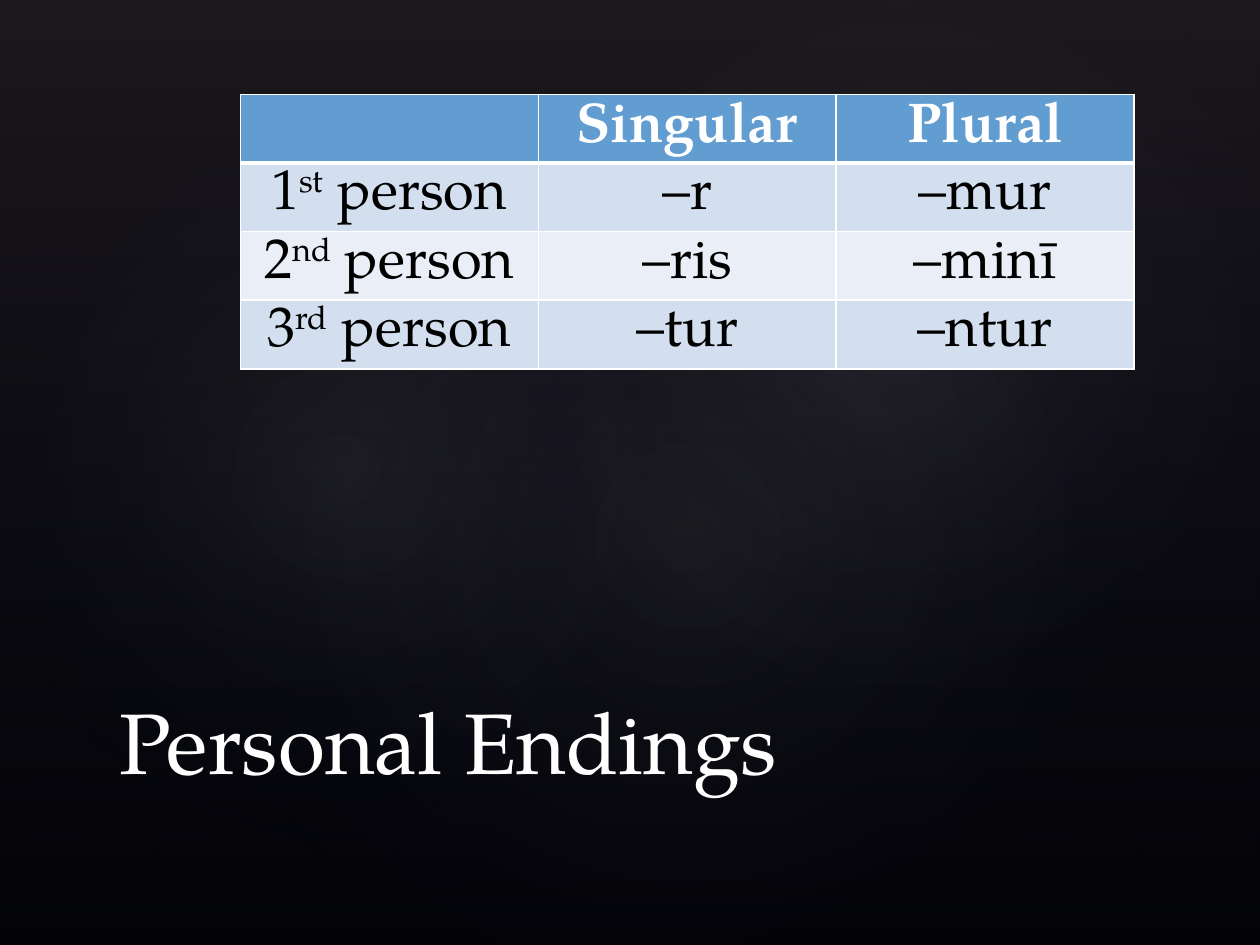
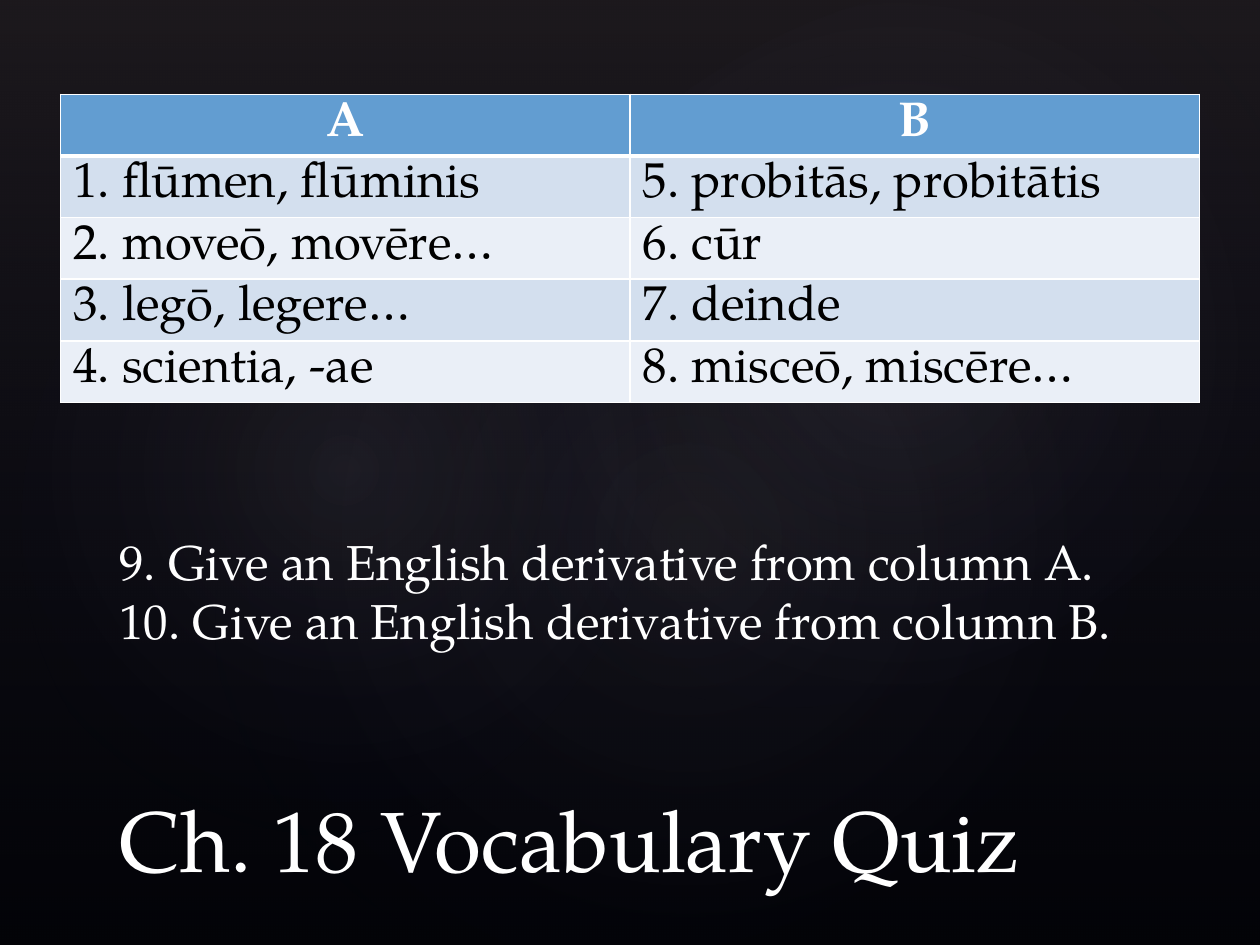
from pptx import Presentation
from pptx import util as u
from pptx.dml.color import RGBColor
from pptx.enum import shapes, text
from pptx.oxml import parse_xml
from pptx.oxml.ns import nsdecls, qn

FONT = "TeX Gyre Pagella"
BLACK = RGBColor(0x00, 0x00, 0x00)
WHITE = RGBColor(0xFF, 0xFF, 0xFF)
BLUE = RGBColor(0x62, 0x9D, 0xD1)
BAND_DARK = RGBColor(0xD3, 0xDF, 0xEE)
BAND_LIGHT = RGBColor(0xEA, 0xEF, 0xF7)
TAUPE = RGBColor(0x50, 0x46, 0x52)
NAVY = RGBColor(0x24, 0x28, 0x52)
MAUVE = RGBColor(0xC4, 0xBC, 0xC6)

LINEAR_DOWN = '<a:lin ang="5400000" scaled="0"/>'
RADIAL = ('<a:path path="circle"><a:fillToRect l="50000" t="50000" '
          'r="50000" b="50000"/></a:path>')
GLOWS = [
    (3.81, 2.9, 20.12, 15.85, 328.7, 7),
    (-0.76, 3.25, 15.39, 12.45, 294.3, 8),
    (9.09, 0.33, 18.01, 13.21, 328.7, 8),
]
ROW_HEIGHT = u.Cm(1.04)
TEXT_LEFT, TEXT_WIDTH = 2.16, 20.96


def gradient_shape(slide, kind, box, stops, direction, rotation=0):
    sp = slide.shapes.add_shape(kind, *map(u.Cm, box))
    sp.shadow.inherit = False
    sp.rotation = rotation
    sp.line.fill.background()
    sp.fill.background()
    marks = "".join(
        f'<a:gs pos="{pos * 1000}"><a:srgbClr val="{color}">'
        f'<a:alpha val="{alpha * 1000}"/></a:srgbClr></a:gs>'
        for pos, color, alpha in stops)
    grad = parse_xml(f'<a:gradFill {nsdecls("a")} rotWithShape="1">'
                     f'<a:gsLst>{marks}</a:gsLst>{direction}</a:gradFill>')
    props = sp._element.spPr
    props.replace(props.find(qn("a:noFill")), grad)


def add_backdrop(slide):
    fill = slide.background.fill
    fill.solid()
    fill.fore_color.rgb = BLACK
    gradient_shape(slide, shapes.MSO_SHAPE.RECTANGLE, (0, 0, 25.4, 19.05),
                   [(0, TAUPE, 36), (100, NAVY, 10)], LINEAR_DOWN)
    for *box, rotation, alpha in GLOWS:
        gradient_shape(slide, shapes.MSO_SHAPE.OVAL, box,
                       [(0, MAUVE, alpha), (58, NAVY, 0)], RADIAL, rotation)


def add_runs(p, content, size, color, bold=False):
    for i, piece in enumerate(content.split("^")):
        r = p.add_run()
        r.text = piece
        r.font.name = FONT
        r.font.size = u.Pt(size)
        r.font.bold = bold
        r.font.color.rgb = color
        if i % 2:
            r._r.get_or_add_rPr().set("baseline", "30000")


def add_text(slide, top, height, lines, size):
    box = slide.shapes.add_textbox(u.Cm(TEXT_LEFT), u.Cm(top),
                                   u.Cm(TEXT_WIDTH), u.Cm(height))
    tf = box.text_frame
    tf.word_wrap = True
    for i, line in enumerate(lines):
        p = tf.add_paragraph() if i else tf.paragraphs[0]
        add_runs(p, line, size, WHITE)
    return tf


def add_title(slide, top, title):
    tf = add_text(slide, top, 2.54, [title], 49)
    tf.vertical_anchor = text.MSO_ANCHOR.BOTTOM


def set_borders(cell, top, bottom):
    props = cell._tc.get_or_add_tcPr()
    for side, width in (("L", 1), ("R", 1), ("T", top), ("B", bottom)):
        props.append(parse_xml(
            f'<a:ln{side} {nsdecls("a")} w="{u.Pt(width)}"><a:solidFill>'
            f'<a:srgbClr val="{WHITE}"/></a:solidFill></a:ln{side}>'))


def add_banded_table(slide, left, width, rows, size, center_body):
    frame = slide.shapes.add_table(len(rows), len(rows[0]), u.Cm(left), u.Cm(1.9),
                                   u.Cm(width), ROW_HEIGHT * len(rows))
    table = frame.table
    for i, row in enumerate(rows):
        table.rows[i].height = ROW_HEIGHT
        header = i == 0
        for j, content in enumerate(row):
            cell = table.cell(i, j)
            set_borders(cell, 3 if i == 1 else 1, 3 if header else 1)
            cell.fill.solid()
            cell.fill.fore_color.rgb = (
                BLUE if header else BAND_DARK if i % 2 else BAND_LIGHT)
            p = cell.text_frame.paragraphs[0]
            p.line_spacing = u.Pt(size)
            if header or center_body:
                p.alignment = text.PP_ALIGN.CENTER
            if content:
                add_runs(p, content, size, WHITE if header else BLACK, header)


def new_slide(prs):
    slide = prs.slides.add_slide(prs.slide_layouts[6])
    add_backdrop(slide)
    return slide


def personal_endings(prs):
    slide = new_slide(prs)
    add_banded_table(slide, 4.85, 18.01, [
        ("", "Singular", "Plural"),
        ("1^st^ person", "–r", "–mur"),
        ("2^nd^ person", "–ris", "–minī"),
        ("3^rd^ person", "–tur", "–ntur"),
    ], 32, True)
    add_title(slide, 13.54, "Personal Endings")


def vocabulary_quiz(prs):
    slide = new_slide(prs)
    add_banded_table(slide, 1.22, 22.96, [
        ("A", "B"),
        ("1. flūmen, flūminis", "5. probitās, probitātis"),
        ("2. moveō, movēre…", "6. cūr"),
        ("3. legō, legere…", "7. deinde"),
        ("4. scientia, -ae", "8. misceō, miscēre…"),
    ], 28, False)
    add_title(slide, 15.52, "Ch. 18 Vocabulary Quiz")
    add_text(slide, 10.59, 2.64, [
        "9. Give an English derivative from column A.",
        "10. Give an English derivative from column B.",
    ], 28)


def main():
    prs = Presentation()
    prs.slide_width, prs.slide_height = u.Cm(25.4), u.Cm(19.05)
    personal_endings(prs)
    vocabulary_quiz(prs)
    prs.save("out.pptx")


if __name__ == "__main__":
    main()
